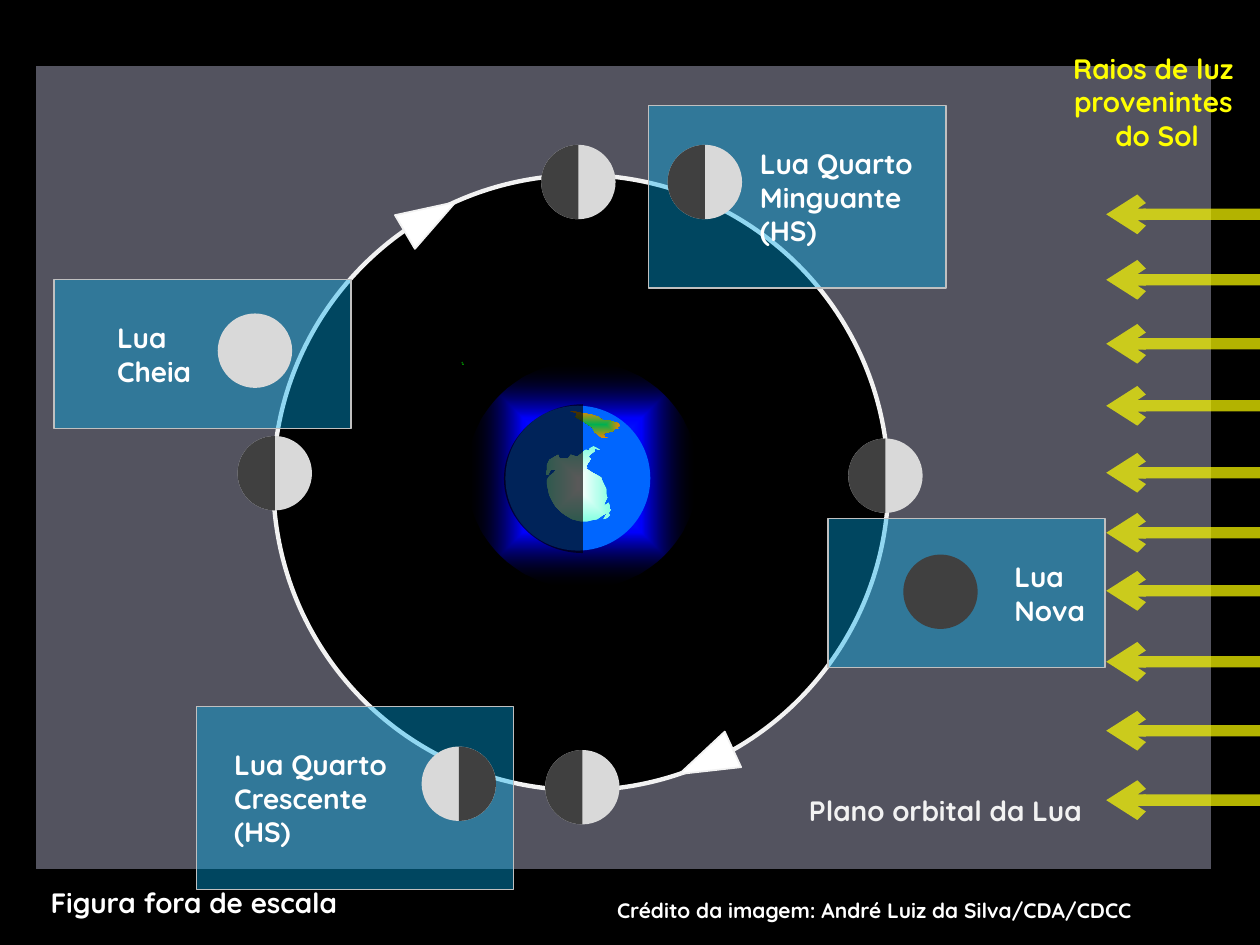
from pptx import Presentation
from pptx.dml.color import RGBColor
from pptx.enum.shapes import MSO_CONNECTOR, MSO_SHAPE
from pptx.enum.text import MSO_ANCHOR, PP_ALIGN
from pptx.oxml import parse_xml
from pptx.oxml.ns import nsdecls, qn
from pptx.util import Cm, Pt
from lxml.etree import SubElement

BLACK = RGBColor(0x00, 0x00, 0x00)
WHITE = RGBColor(0xFF, 0xFF, 0xFF)
PALE = RGBColor(0xF2, 0xF2, 0xF2)
LIT = RGBColor(0xD9, 0xD9, 0xD9)
DARK = RGBColor(0x40, 0x40, 0x40)
SILVER = RGBColor(0xC0, 0xC0, 0xC0)
LILAC = RGBColor(0xD6, 0xD6, 0xF5)
YELLOW = RGBColor(0xFF, 0xFF, 0x00)
CYAN = RGBColor(0x00, 0xB0, 0xF0)
SEA = RGBColor(0x00, 0x66, 0xFF)
BLUE = RGBColor(0x00, 0x00, 0xFF)
LEAF = RGBColor(0x00, 0xB0, 0x50)
SAND = RGBColor(0xEE, 0x88, 0x00)
ICE = RGBColor(0x85, 0xFF, 0xE0)
GREEN = RGBColor(0x00, 0x80, 0x00)

FONT = {"name": "Quicksand", "bold": True}
LEFT_HALF = (54, 162)
RIGHT_HALF = (162, 54)
MOON = 1.5

deck = Presentation()
deck.slide_width, deck.slide_height = Cm(25.4), Cm(19.05)
slide = deck.slides.add_slide(deck.slide_layouts[6])
slide.background.fill.solid()
slide.background.fill.fore_color.rgb = BLACK
shapes = slide.shapes


def draw(kind, box, fill, alpha=100, edge=None, width=1, turn=0, adjust=()):
    shape = shapes.add_shape(kind, *[Cm(n) for n in box])
    shape.shadow.inherit = False
    shape.rotation = turn
    for i, value in enumerate(adjust):
        shape.adjustments[i] = value
    shape.fill.solid()
    shape.fill.fore_color.rgb = fill
    if alpha < 100:
        tint = shape.element.spPr.find(qn("a:solidFill"))[0]
        SubElement(tint, qn("a:alpha"), val=str(alpha * 1000))
    if edge is None:
        shape.line.fill.background()
    else:
        shape.line.color.rgb = edge
        shape.line.width = Pt(width)
    return shape


def grade(shape, stops):
    marks = "".join(
        f'<a:gs pos="{pos * 1000}"><a:srgbClr val="{color}">'
        f'<a:alpha val="{alpha * 1000}"/></a:srgbClr></a:gs>'
        for pos, color, alpha in stops)
    props = shape.element.spPr
    props.replace(props.find(qn("a:solidFill")), parse_xml(
        f'<a:gradFill {nsdecls("a")} rotWithShape="1"><a:gsLst>{marks}</a:gsLst>'
        '<a:path path="shape"><a:fillToRect l="50000" t="50000" r="50000" b="50000"/>'
        '</a:path></a:gradFill>'))


draw(MSO_SHAPE.PARALLELOGRAM, (0.71, 1.32, 23.72, 16.21), LILAC, 39, BLACK, adjust=(0,))
draw(MSO_SHAPE.OVAL, (5.51, 3.53, 12.4, 12.4), BLACK, edge=PALE, width=2.5)

for y in (4.32, 5.64, 6.93, 8.18, 9.53, 10.74, 11.91, 13.34, 14.73, 16.13):
    ray = shapes.add_connector(MSO_CONNECTOR.STRAIGHT, Cm(25.6), Cm(y), Cm(22.3), Cm(y))
    ray.line.color.rgb = YELLOW
    ray.line.width = Pt(6.5)
    props = ray._element.spPr
    line = props.find(qn("a:ln"))
    SubElement(line.find(qn("a:solidFill"))[0], qn("a:alpha"), val="70000")
    SubElement(line, qn("a:tailEnd"), type="arrow")
    SubElement(props, qn("a:effectLst"))

texts = []
moons = [(x, y, LIT, LEFT_HALF) for x, y in
         ((4.79, 8.79), (10.99, 15.12), (17.1, 8.84), (10.91, 2.92))]
phases = (
    ((13.08, 2.13, 5.99, 3.68), 2.24, ("Lua Quarto", "Minguante (HS)"),
     (13.46, 2.92, LIT, LEFT_HALF)),
    ((1.09, 5.64, 5.99, 3), 1.27, ("Lua", "Cheia"), (4.39, 6.32, LIT, None)),
    ((3.96, 14.25, 6.4, 3.68), 0.76, ("Lua Quarto", "Crescente", "(HS)"),
     (8.5, 15.05, LIT, RIGHT_HALF)),
    ((16.69, 10.46, 5.59, 3), 3.76, ("Lua", "Nova"), (18.21, 11.18, DARK, None)),
)
for box, inset, lines, moon in phases:
    card = draw(MSO_SHAPE.RECTANGLE, box, CYAN, 40, SILVER, 0.75)
    card.text_frame.margin_left = Cm(inset)
    card.text_frame.vertical_anchor = MSO_ANCHOR.MIDDLE
    texts.append((card, lines, 16, WHITE, PP_ALIGN.LEFT, True))
    moons.append(moon)

for x, y, color, half in moons:
    draw(MSO_SHAPE.OVAL, (x, y, MOON, MOON), color)
    if half:
        draw(MSO_SHAPE.CHORD, (x, y, MOON, MOON), DARK, adjust=half)

labels = (
    ((12.19, 17.96, 13.41, 0.76), ("Crédito da imagem: André Luiz da Silva/CDA/CDCC",),
     12, WHITE, PP_ALIGN.LEFT, True),
    ((21.36, 0.91, 3.94, 2.31), ("Raios de luz ", "provenintes ", "do Sol"),
     16, YELLOW, PP_ALIGN.CENTER, False),
    ((16.05, 15.88, 6.02, 0.94), ("Plano orbital da Lua",),
     16, PALE, PP_ALIGN.CENTER, False),
    ((0.71, 17.73, 6.4, 0.94), ("Figura fora de escala",),
     16, WHITE, PP_ALIGN.CENTER, False),
)
for box, *style in labels:
    texts.append((shapes.add_textbox(*[Cm(n) for n in box]), *style))

for shape, lines, size, color, align, wrap in texts:
    frame = shape.text_frame
    frame.word_wrap = wrap
    frame.text = "\n".join(lines)
    for para in frame.paragraphs:
        para.alignment = align
        for key, value in FONT.items():
            setattr(para.font, key, value)
        para.font.size = Pt(size)
        para.font.color.rgb = color

for x, y, turn in ((13.84, 14.76, 245.3), (8.28, 3.78, 59.4)):
    draw(MSO_SHAPE.ISOSCELES_TRIANGLE, (x, y, 0.79, 1.19), WHITE, edge=PALE, turn=turn)

glow = draw(MSO_SHAPE.OVAL, (9.4, 7.29, 4.65, 4.57), SEA)
grade(glow, ((0, SEA, 100), (50, BLUE, 100), (100, BLACK, 0)))
draw(MSO_SHAPE.OVAL, (10.19, 8.18, 2.92, 2.92), SEA)

north = (
    (452, 326), (458, 328), (457, 331), (464, 335), (470, 339), (472, 343),
    (477, 347), (484, 348), (480, 347), (479, 344), (483, 343), (487, 342),
    (485, 341), (491, 340), (490, 339), (492, 338), (491, 336), (484, 334),
    (479, 334), (475, 331), (469, 329), (462, 328), (458, 327))
south = (
    (469, 413), (474, 412), (478, 409), (482, 407), (479, 412), (482, 411),
    (484, 409), (483, 407), (485, 405), (483, 399), (479, 402), (480, 399),
    (482, 395), (481, 392), (481, 388), (478, 382), (477, 379), (468, 374),
    (464, 371), (466, 371), (465, 370), (469, 364), (467, 363), (468, 361),
    (472, 358), (472, 356), (476, 357), (471, 354), (468, 356), (468, 358),
    (465, 357), (459, 362), (456, 362), (453, 361), (451, 364), (447, 364),
    (444, 364), (443, 361), (436, 365), (434, 369), (434, 374), (433, 373),
    (433, 377), (435, 377), (437, 373), (441, 373), (440, 375), (436, 378),
    (434, 381), (434, 384), (436, 393), (438, 397), (441, 402), (445, 406),
    (449, 409), (454, 412), (461, 414), (466, 414))
lands = (
    (north, LEAF, ((0, LEAF, 100), (100, SAND, 100))),
    (south, ICE, ((3, WHITE, 100), (100, ICE, 100))),
    (((367, 289), (367, 290), (368, 290), (368, 289)), GREEN, None),
    (((366, 288), (368, 289), (367, 287)), GREEN, None),
)
for points, color, stops in lands:
    path = shapes.build_freeform(*points[0], scale=Cm(2.54) / 100)
    path.add_line_segments(points[1:], close=True)
    land = path.convert_to_shape()
    land.shadow.inherit = False
    land.line.fill.background()
    land.fill.solid()
    land.fill.fore_color.rgb = color
    if stops:
        grade(land, stops)

draw(MSO_SHAPE.CHORD, (10.16, 8.15, 3.18, 3), BLACK, 65, adjust=LEFT_HALF)

deck.save("out.pptx")
